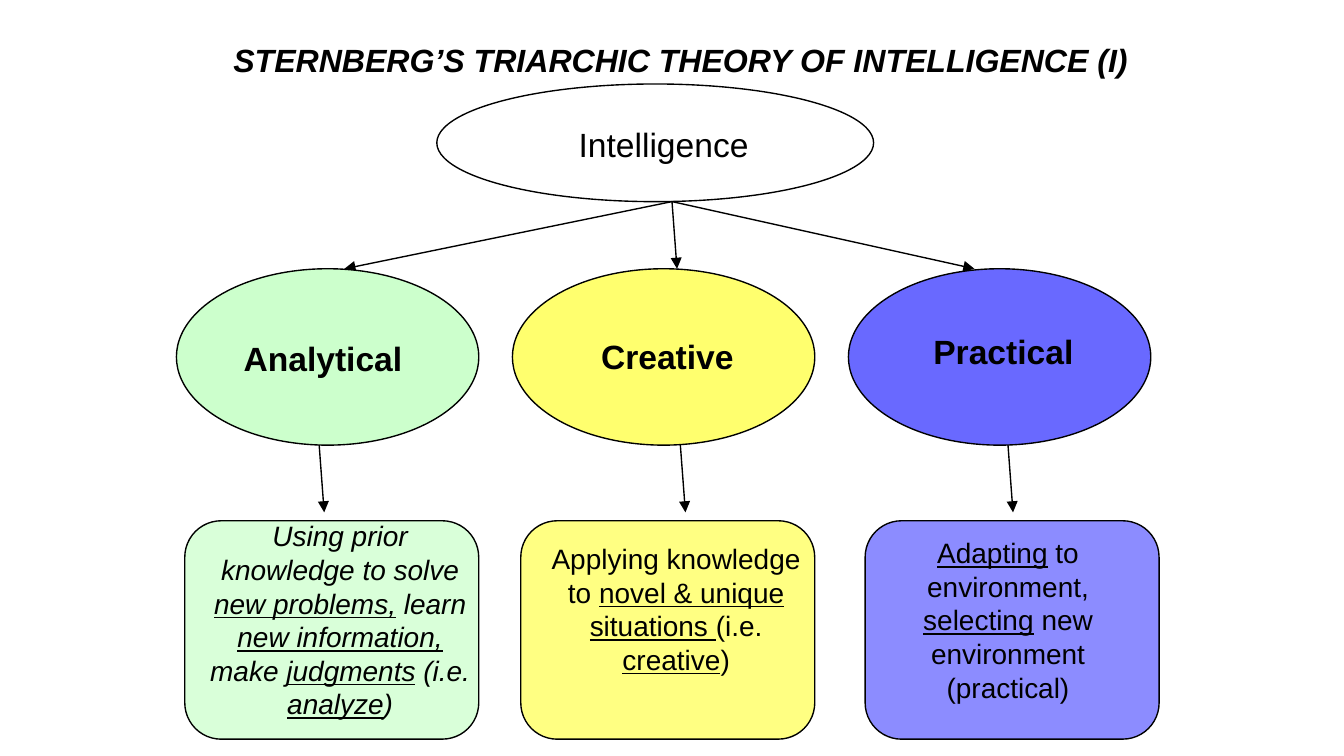
import pptx
import pptx.util
import pptx.dml.color
import pptx.enum.shapes
import pptx.enum.text
import pptx.oxml.ns
from lxml import etree

RGB = pptx.dml.color.RGBColor
BLACK = RGB(0x00, 0x00, 0x00)
GREEN = RGB(0xCC, 0xFF, 0xCC)
YELLOW = RGB(0xFF, 0xFF, 0x00)
BLUE = RGB(0x00, 0x00, 0xFF)
OVAL = pptx.enum.shapes.MSO_SHAPE.OVAL
ROUNDED = pptx.enum.shapes.MSO_SHAPE.ROUNDED_RECTANGLE
COLS, ROWS = 160, 90  # square grid cells of 1/16 inch
qn = pptx.oxml.ns.qn


class Diagram:
    font, line_width = "Arial", 0.75

    def __init__(self, prs):
        self.cell = prs.slide_width / COLS
        self.s = prs.slides.add_slide(prs.slide_layouts[5])

    def grid(self, *cells):
        return [round(c * self.cell) for c in cells]

    def fill_text(self, sp, paragraphs, size, bold=False, italic=False):
        """Each paragraph is a list of (text, underlined) runs."""
        tf = sp.text_frame
        tf.word_wrap = True
        tf.auto_size = pptx.enum.text.MSO_AUTO_SIZE.NONE
        tf.vertical_anchor = pptx.enum.text.MSO_ANCHOR.TOP
        for i, runs in enumerate(paragraphs):
            p = tf.add_paragraph() if i else tf.paragraphs[0]
            p.alignment = pptx.enum.text.PP_ALIGN.CENTER
            for text, underlined in runs:
                r = p.add_run()
                r.text = text
                f = r.font
                f.name, f.size = self.font, pptx.util.Pt(size)
                f.bold, f.italic, f.underline = bold, italic, underlined
                f.color.rgb = BLACK

    def title(self, box, text, size):
        sp = self.s.shapes.title
        sp.left, sp.top, sp.width, sp.height = self.grid(*box)
        self.fill_text(sp, [[(text, False)]], size, bold=True, italic=True)

    def text(self, box, paragraphs, size, **style):
        sp = self.s.shapes.add_textbox(*self.grid(*box))
        self.fill_text(sp, paragraphs, size, **style)

    def shape(self, kind, box, fill=None, opacity=100):
        sp = self.s.shapes.add_shape(kind, *self.grid(*box))
        sp.shadow.inherit = False
        sp.line.color.rgb = BLACK
        sp.line.width = pptx.util.Pt(self.line_width)
        if fill is None:
            sp.fill.background()
            return
        sp.fill.solid()
        sp.fill.fore_color.rgb = fill
        if opacity < 100:
            color = sp._element.spPr.find(qn("a:solidFill"))[0]
            etree.SubElement(color, qn("a:alpha"), val=str(opacity * 1000))

    def arrow(self, start, end):
        straight = pptx.enum.shapes.MSO_CONNECTOR.STRAIGHT
        sp = self.s.shapes.add_connector(straight, *self.grid(*start, *end))
        sp.line.color.rgb = BLACK
        sp.line.width = pptx.util.Pt(self.line_width)
        line = sp._element.spPr.find(qn("a:ln"))
        etree.SubElement(line, qn("a:tailEnd"), type="triangle")
        etree.SubElement(sp._element.spPr, qn("a:effectLst"))


# Per branch: name, its text position, colour, oval and card opacity, arrow columns,
# card column, description position and width, italic, description
BRANCHES = [
    ("Analytical ", (24, 39.4), GREEN, 100, 73, 41, 38, 22, (23, 61), 35, True,
     [[("Using prior knowledge to solve ", False), ("new problems,", True),
       (" learn ", False), ("new information, ", True), ("make ", False),
       ("judgments", True), (" (i.e. ", False), ("analyze", True), (")", False)]]),
    ("Creative ", (65, 39.2), YELLOW, 57, 49, 80.6, 81, 62, (63, 63.7), 35, False,
     [[("Applying knowledge to ", False), ("novel & unique situations ", True),
       ("(i.e. ", False), ("creative", True), (")", False)]]),
    ("Practical ", (105, 38.6), BLUE, 59, 45, 116, 120, 103, (102, 63), 36, False,
     [[("Adapting", True), (" to environment, ", False), ("selecting", True),
       (" new environment", False)], [("(practical)", False)]]),
]


def main():
    prs = pptx.Presentation()
    prs.slide_width = pptx.util.Inches(10)
    prs.slide_height = round(prs.slide_width * ROWS / COLS)
    d = Diagram(prs)

    # Title and root
    d.title((21, 4, 120, 6.3), "STERNBERG’S TRIARCHIC THEORY OF INTELLIGENCE (I)", 17.2)
    d.shape(OVAL, (52, 10, 52, 14))
    d.text((57, 14, 44, 6.4), [[("Intelligence", False)]], 18)

    # Three branches, each an oval leading to a card
    for i, (name, name_at, color, oval_opacity, card_opacity, tip, stem,
            card, body_at, body_width, italic, body) in enumerate(BRANCHES):
        d.arrow((80, 24), (tip, 32))
        d.shape(OVAL, (21 + 40 * i, 32, 36, 21), color, oval_opacity)
        d.text((*name_at, 30, 11), [[(name, False)]], 18, bold=True)
        d.shape(ROUNDED, (card, 62, 35, 26), color, card_opacity)
        d.text((*body_at, body_width, 24), body, 15, italic=italic)
        d.arrow((stem, 53), (stem + 0.6, 61))

    prs.save("out.pptx")


if __name__ == "__main__":
    main()
